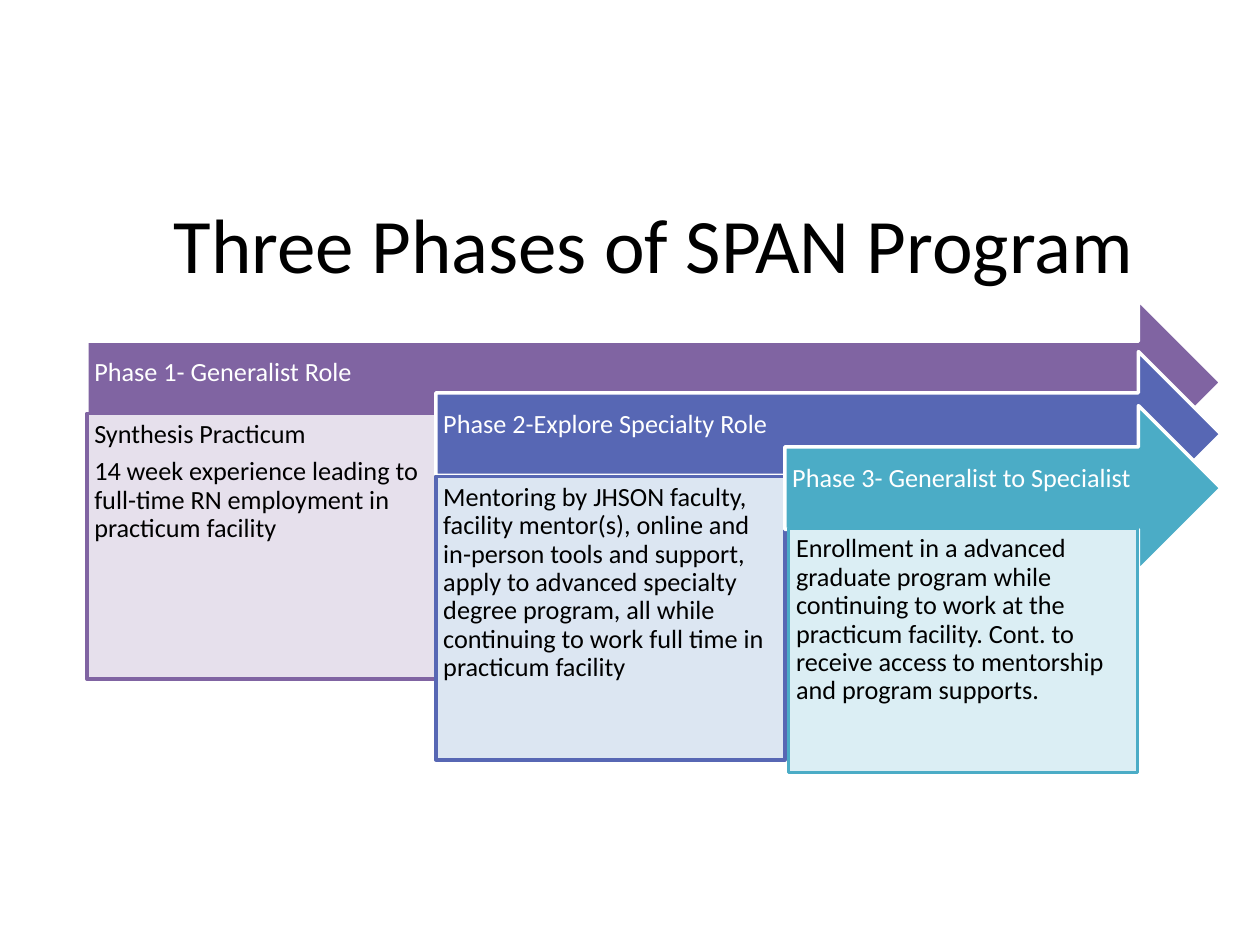
import pptx
import pptx.util
import pptx.dml.color
import pptx.enum.shapes
import pptx.enum.text

Pt = pptx.util.Pt
RGB = pptx.dml.color.RGBColor.from_string
Shape = pptx.enum.shapes.MSO_SHAPE
Anchor = pptx.enum.text.MSO_ANCHOR
Align = pptx.enum.text.PP_ALIGN

COLORS = {
    "black": "000000", "white": "FFFFFF",
    "purple": "8064A2", "pale purple": "E6E0EC",
    "blue": "5767B4", "pale blue": "DCE6F2",
    "teal": "4BACC6", "pale teal": "DBEEF4",
}
LEFT, RIGHT, STEP = 49.7, 697.7, 199.4
ARROW_HEIGHT = 94.3
INSET = 4.2

PHASES = [
    ("purple", "Phase 1- Generalist Role", 171.4, (0, 236.2, 151.9),
     ["Synthesis Practicum",
      "14 week experience leading to full-time RN employment in practicum facility"]),
    ("blue", "Phase 2-Explore Specialty Role", 200.9, (0, 272.2, 162),
     ["Mentoring by JHSON faculty, facility mentor(s), online and in-person tools "
      "and support, apply to advanced specialty degree program, all while "
      "continuing to work full time in practicum facility"]),
    ("teal", "Phase 3- Generalist to Specialist", 231.8, (2.2, 301.7, 139.7),
     ["Enrollment in a advanced graduate program while continuing to work at the "
      "practicum facility. Cont. to receive access to mentorship and program "
      "supports."]),
]


def add_block(group, preset, bounds, fill, line, lines, ink, anchor, insets):
    block = group.shapes.add_shape(preset, *[Pt(length) for length in bounds])
    block.shadow.inherit = False
    block.fill.solid()
    block.fill.fore_color.rgb = RGB(COLORS[fill])
    block.line.color.rgb = RGB(COLORS[line])
    block.line.width = Pt(2)
    frame = block.text_frame
    frame.word_wrap = True
    frame.vertical_anchor = anchor
    frame.margin_left, frame.margin_top, frame.margin_right, frame.margin_bottom = [
        Pt(inset) for inset in insets]
    frame.text = "\n".join(lines)
    for paragraph in frame.paragraphs:
        paragraph.alignment = Align.LEFT
        paragraph.line_spacing = 0.9
        paragraph.space_after = Pt(5.25)
        for run in paragraph.runs:
            run.font.name = "Calibri"
            run.font.size = Pt(15)
            run.font.color.rgb = RGB(COLORS[ink])


deck = pptx.Presentation()
deck.slide_width, deck.slide_height = Pt(720), Pt(540)
slide = deck.slides.add_slide(deck.slide_layouts[5])

title = slide.shapes.title
title.left, title.top, title.width, title.height = Pt(LEFT), Pt(93.6), Pt(648), Pt(90)
title.text_frame.text = "Three Phases of SPAN Program"
title.text_frame.vertical_anchor = Anchor.MIDDLE
heading = title.text_frame.paragraphs[0]
heading.alignment = Align.CENTER
heading.runs[0].font.name = "Calibri"
heading.runs[0].font.size = Pt(44)
heading.runs[0].font.color.rgb = RGB(COLORS["black"])

phases = slide.shapes.add_group_shape()
for index, (color, name, arrow_top, detail, description) in enumerate(PHASES):
    left = LEFT + index * STEP
    shift, detail_top, detail_height = detail
    add_block(phases, Shape.RIGHT_ARROW, (left, arrow_top, RIGHT - left, ARROW_HEIGHT),
              color, "white", [name], "white", Anchor.MIDDLE,
              (INSET, INSET, 20, 15))
    add_block(phases, Shape.RECTANGLE, (left + shift, detail_top, STEP, detail_height),
              "pale " + color, color, description, "black", Anchor.TOP, [INSET] * 4)

deck.save("out.pptx")
